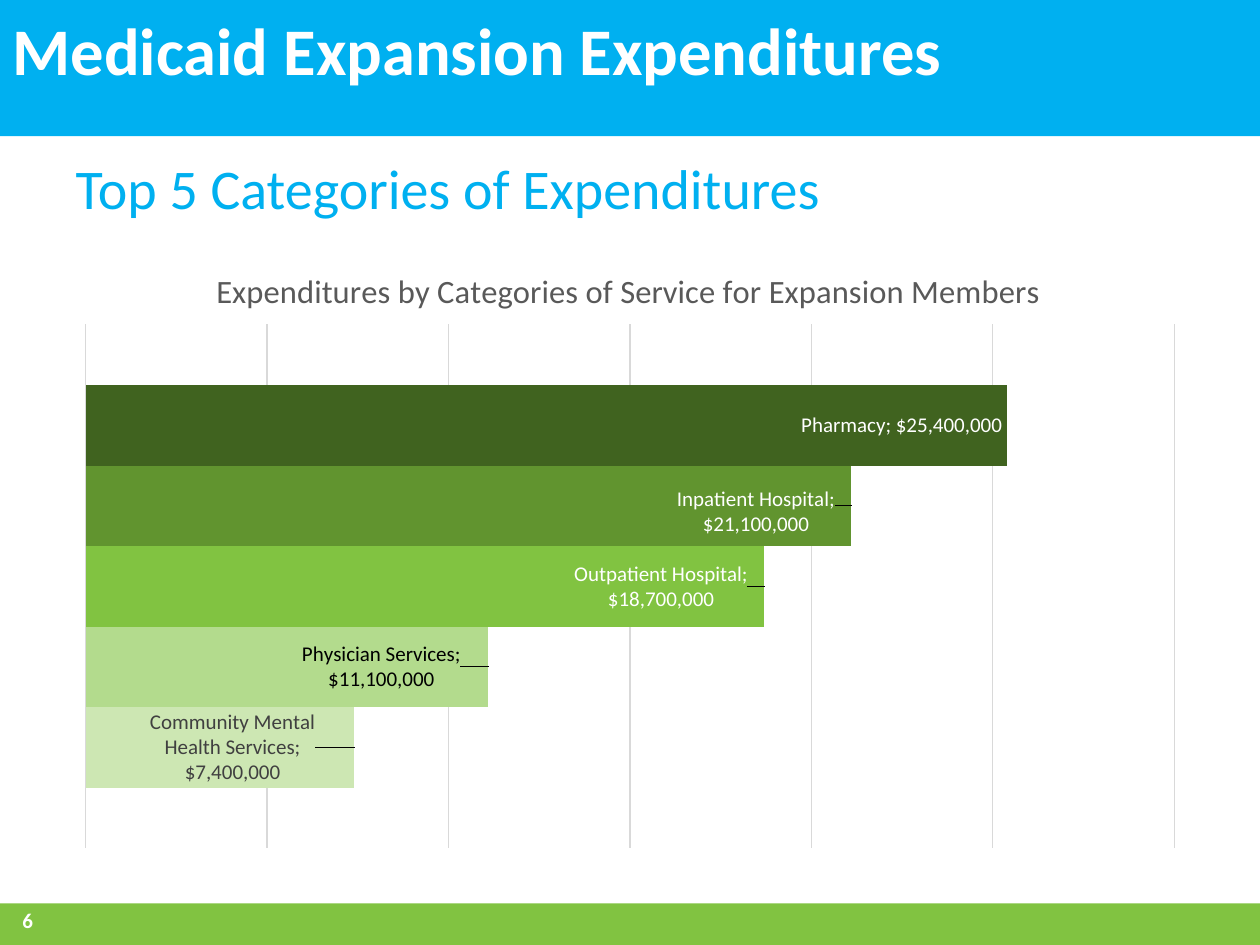
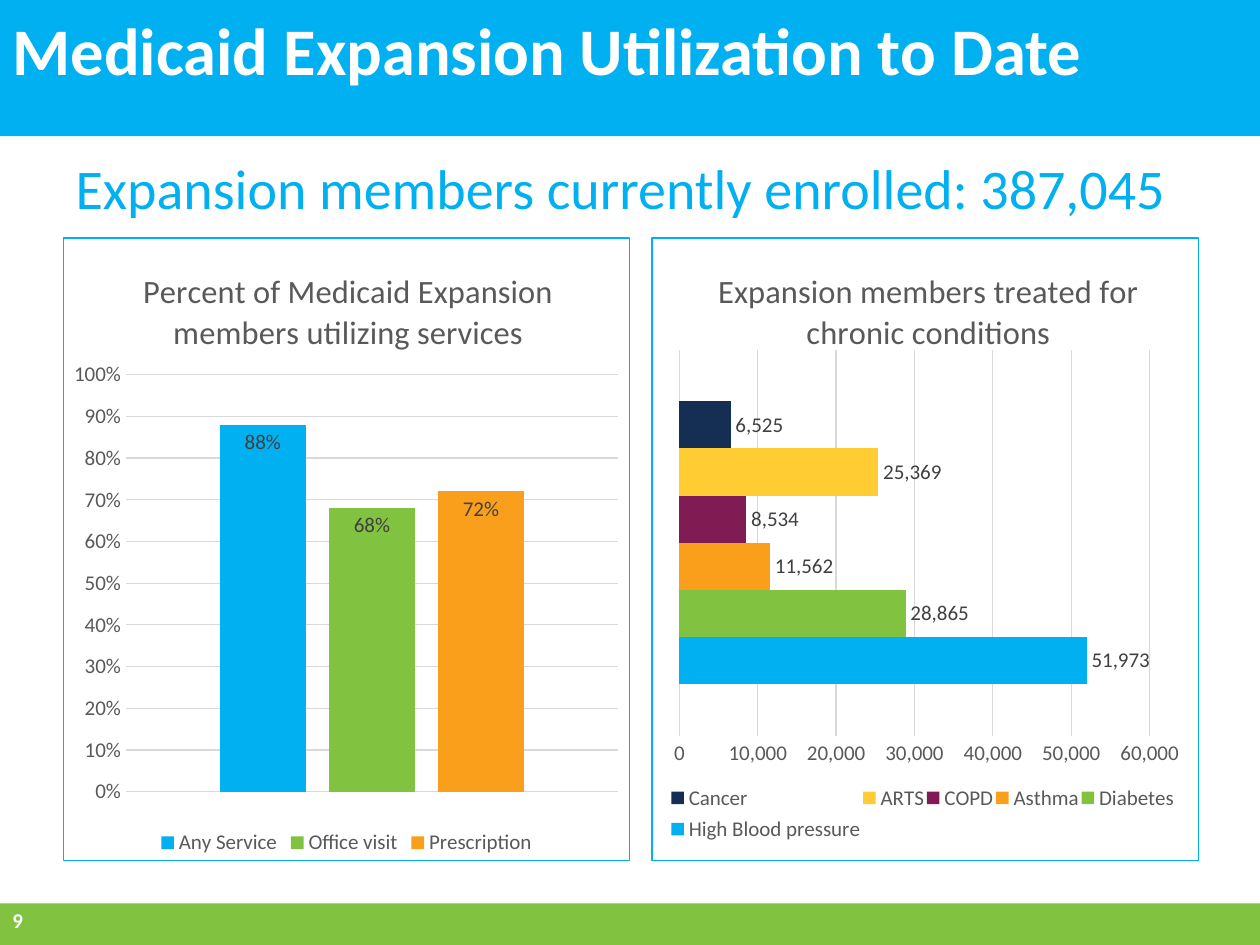
import lxml.etree
import pptx
import pptx.chart.data
import pptx.dml.color
import pptx.enum.chart
import pptx.enum.shapes
import pptx.enum.text
import pptx.oxml.ns
import pptx.util

Pt = pptx.util.Pt
RGB = pptx.dml.color.RGBColor.from_string
qn = pptx.oxml.ns.qn
Kind = pptx.enum.chart.XL_CHART_TYPE
Spot = pptx.enum.chart.XL_LABEL_POSITION
Tick = pptx.enum.chart.XL_TICK_MARK
Edge = pptx.enum.chart.XL_LEGEND_POSITION
Align = pptx.enum.text.PP_ALIGN
Anchor = pptx.enum.text.MSO_ANCHOR

FACE = "Calibri"
HUE = {
    "sky": "00B0F0", "green": "81C341", "white": "FFFFFF", "black": "000000",
    "text": "595959", "label": "404040", "grid": "D9D9D9", "orange": "F99F1B",
    "plum": "811B53", "gold": "FFCD33", "navy": "152E54", "pale": "CDE7B3",
    "light": "B3DB8D", "leaf": "61942F", "forest": "40631F",
}

deck = pptx.Presentation()
deck.slide_width = pptx.util.Inches(10)
deck.slide_height = pptx.util.Inches(7.5)
COL = deck.slide_width / 100
ROW = deck.slide_height / 100


def grid(left, top, wide, tall):
    return [round(n * unit) for n, unit in
            zip((left, top, wide, tall), (COL, ROW, COL, ROW))]


def place(node, index, box, modes):
    for old in node.findall(qn("c:layout")):
        node.remove(old)
    layout = lxml.etree.Element(qn("c:layout"))
    manual = lxml.etree.SubElement(layout, qn("c:manualLayout"))
    pairs = list(modes.items()) + list(zip("xywh", box))
    for tag, val in pairs:
        lxml.etree.SubElement(manual, qn("c:" + tag)).set("val", str(val))
    node.insert(index, layout)


FIXED = {"xMode": "edge", "yMode": "edge"}
INNER = {"layoutTarget": "inner", **FIXED}
HEAD = (0, 0, 100, 14.4)
FOOT = (0, 95.6, 100, 4.4)

SLIDES = [
    {
        "title": "Medicaid Expansion Expenditures",
        "lead": "Top 5 Categories of Expenditures",
        "page": "6", "inset": 0.8,
        "charts": [{
            "kind": Kind.BAR_CLUSTERED, "box": (5, 25.1, 90, 66),
            "title": "Expenditures by Categories of Service for Expansion Members",
            "at": (0.13, 0.04), "plot": (0.02, 0.14, 0.96, 0.84),
            "fmt": '"$"#,##0', "top": 30000000, "step": 5000000,
            "gap": 150, "lap": 0, "spot": Spot.INSIDE_END, "framed": False,
            "rows": [
                ("Community Mental Health Services", 7400000, "pale", "label", (-0.03, 0)),
                ("Physician Services", 11100000, "light", "black", (-0.02, 0)),
                ("Outpatient Hospital", 18700000, "green", "white", (-0.01, 0)),
                ("Inpatient Hospital", 21100000, "leaf", "white", (-0.01, 0.01)),
                ("Pharmacy", 25400000, "forest", "white", None),
            ],
        }],
    },
    {
        "title": "Medicaid Expansion Utilization to Date",
        "lead": "Expansion members currently enrolled: 387,045",
        "page": "9", "inset": 0,
        "charts": [
            {
                "kind": Kind.COLUMN_CLUSTERED, "box": (5, 25.1, 45, 66),
                "title": "Percent of Medicaid Expansion members utilizing services",
                "at": (0.13, 0.04), "plot": (0.11, 0.22, 0.87, 0.67),
                "fmt": "0%", "top": 1, "step": 0.1,
                "gap": 219, "lap": -27, "spot": Spot.INSIDE_END, "framed": True,
                "rows": [
                    ("Any Service", 0.88, "sky", "label", None),
                    ("Office visit", 0.68, "green", "label", None),
                    ("Prescription", 0.72, "orange", "label", None),
                ],
            },
            {
                "kind": Kind.BAR_CLUSTERED, "box": (51.7, 25.1, 43.5, 66),
                "title": "Expansion members treated for chronic conditions",
                "at": (0.11, 0.04), "plot": (0.05, 0.18, 0.86, 0.62),
                "key": (0.03, 0.87, 0.93, 0.11),
                "fmt": "#,##0", "top": 60000, "step": 10000,
                "gap": 219, "lap": 0, "spot": Spot.OUTSIDE_END, "framed": True,
                "rows": [
                    ("High Blood pressure", 51973, "sky", "label", None),
                    ("Diabetes", 28865, "green", "label", None),
                    ("Asthma", 11562, "orange", "label", None),
                    ("COPD", 8534, "plum", "label", None),
                    ("ARTS", 25369, "gold", "label", None),
                    ("Cancer", 6525, "navy", "label", None),
                ],
            },
        ],
    },
]

plan = deck.slide_layouts[1]
for index, item in enumerate(SLIDES):
    slide = deck.slides.add_slide(plan)
    if index == 0:
        for box, hue in ((HEAD, "sky"), (FOOT, "green")):
            band = slide.shapes.add_shape(
                pptx.enum.shapes.MSO_SHAPE.RECTANGLE, *grid(*box))
            band.shadow.inherit = False
            band.fill.solid()
            band.fill.fore_color.rgb = RGB(HUE[hue])
            band.line.fill.background()
            plan.shapes.element.insert(2, band.element)

    title = slide.shapes.title
    body = slide.placeholders[1]
    page = slide.shapes.add_textbox(0, 0, 0, 0)
    for shape, text, box, size, hue, bold, anchor in (
        (title, item["title"], HEAD, 38, "white", True, Anchor.TOP),
        (body, item["lead"], (5, 15.6, 90, 8.9), 32, "sky", False, Anchor.TOP),
        (page, item["page"], (item["inset"], 94.67, 14.2, 5.33), 12, "white", True, Anchor.MIDDLE),
    ):
        shape.left, shape.top, shape.width, shape.height = grid(*box)
        frame = shape.text_frame
        frame.text = text
        frame.word_wrap = True
        frame.auto_size = pptx.enum.text.MSO_AUTO_SIZE.NONE
        frame.vertical_anchor = anchor
        para = frame.paragraphs[0]
        para.alignment = Align.LEFT
        para.space_before = Pt(0)
        if shape is body:
            props = para._p.get_or_add_pPr()
            props.set("marL", "0")
            props.set("indent", "0")
            lxml.etree.SubElement(props, qn("a:buNone"))
        font = para.runs[0].font
        font.name, font.size, font.bold = FACE, Pt(size), bold
        font.color.rgb = RGB(HUE[hue])

    title.text_frame.margin_top = round(ROW)
    props = title.text_frame.paragraphs[0].runs[0].font._element
    glow = lxml.etree.Element(qn("a:effectLst"))
    shade = lxml.etree.SubElement(glow, qn("a:outerShdw"), blurRad="50800",
                                  dist="38100", dir="2700000", algn="tl", rotWithShape="0")
    tint = lxml.etree.SubElement(shade, qn("a:srgbClr"), val=HUE["black"])
    lxml.etree.SubElement(tint, qn("a:alpha"), val="40000")
    props.find(qn("a:solidFill")).addnext(glow)

    for spec in item["charts"]:
        data = pptx.chart.data.CategoryChartData(number_format=spec["fmt"])
        data.categories = ["1"]
        for name, value, *rest in spec["rows"]:
            data.add_series(name, [value])
        chart = slide.shapes.add_chart(spec["kind"], *grid(*spec["box"]), data).chart
        chart.font.name, chart.font.size = FACE, Pt(10)
        chart.font.color.rgb = RGB(HUE["black"])

        head = chart.chart_title
        head.text_frame.text = spec["title"]
        head.include_in_layout = False
        font = head.text_frame.paragraphs[0].runs[0].font
        font.name, font.size, font.bold = FACE, Pt(18.6), False
        font.color.rgb = RGB(HUE["text"])
        place(head.element, 1, spec["at"], FIXED)

        root = chart.element.find(qn("c:chart"))
        place(root.find(qn("c:plotArea")), 0, spec["plot"], INNER)
        style = lxml.etree.Element(qn("c:spPr"))
        lxml.etree.SubElement(style, qn("a:noFill"))
        line = lxml.etree.SubElement(style, qn("a:ln"), w=str(Pt(0.75)))
        if spec["framed"]:
            paint = lxml.etree.SubElement(line, qn("a:solidFill"))
            lxml.etree.SubElement(paint, qn("a:srgbClr"), val=HUE["sky"])
        else:
            lxml.etree.SubElement(line, qn("a:noFill"))
        root.addnext(style)

        chart.category_axis.visible = False
        axis = chart.value_axis
        axis.visible = spec["framed"]
        axis.minimum_scale, axis.maximum_scale = 0, spec["top"]
        axis.major_unit = spec["step"]
        axis.major_tick_mark = axis.minor_tick_mark = Tick.NONE
        axis.format.line.fill.background()
        axis.has_major_gridlines = True
        rule = axis.major_gridlines.format.line
        rule.width = Pt(0.75)
        rule.color.rgb = RGB(HUE["grid"])
        axis.tick_labels.number_format = spec["fmt"]
        axis.tick_labels.number_format_is_linked = False
        fonts = [axis.tick_labels.font]

        chart.has_legend = spec["framed"]
        if spec["framed"]:
            key = chart.legend
            key.position = Edge.BOTTOM
            key.include_in_layout = False
            fonts.append(key.font)
            if "key" in spec:
                place(key._element, 1, spec["key"], FIXED)
        for font in fonts:
            font.name, font.size = FACE, Pt(12)
            font.color.rgb = RGB(HUE["text"])

        plot = chart.plots[0]
        plot.vary_by_categories = False
        plot.gap_width, plot.overlap = spec["gap"], spec["lap"]
        for bar, (name, value, hue, ink, shift) in zip(plot.series, spec["rows"]):
            bar.format.fill.solid()
            bar.format.fill.fore_color.rgb = RGB(HUE[hue])
            tags = bar.data_labels
            tags.show_value = True
            tags.number_format = spec["fmt"]
            tags.number_format_is_linked = False
            marks = [tags] if spec["framed"] else [tags, bar.points[0].data_label]
            for mark in marks:
                mark.position = spec["spot"]
                mark.font.name, mark.font.size = FACE, Pt(12)
                mark.font.color.rgb = RGB(HUE[ink])
            if not spec["framed"]:
                tags.show_series_name = True
                node = tags._element.find(qn("c:dLbl"))
                node.find(qn("c:showSerName")).set("val", "1")
                lxml.etree.SubElement(node, qn("c:separator")).text = "; "
                form = lxml.etree.Element(
                    qn("c:numFmt"), formatCode=spec["fmt"], sourceLinked="0")
                node.find(qn("c:idx")).addnext(form)
                if shift:
                    place(node, 1, shift, {})

deck.save("out.pptx")
